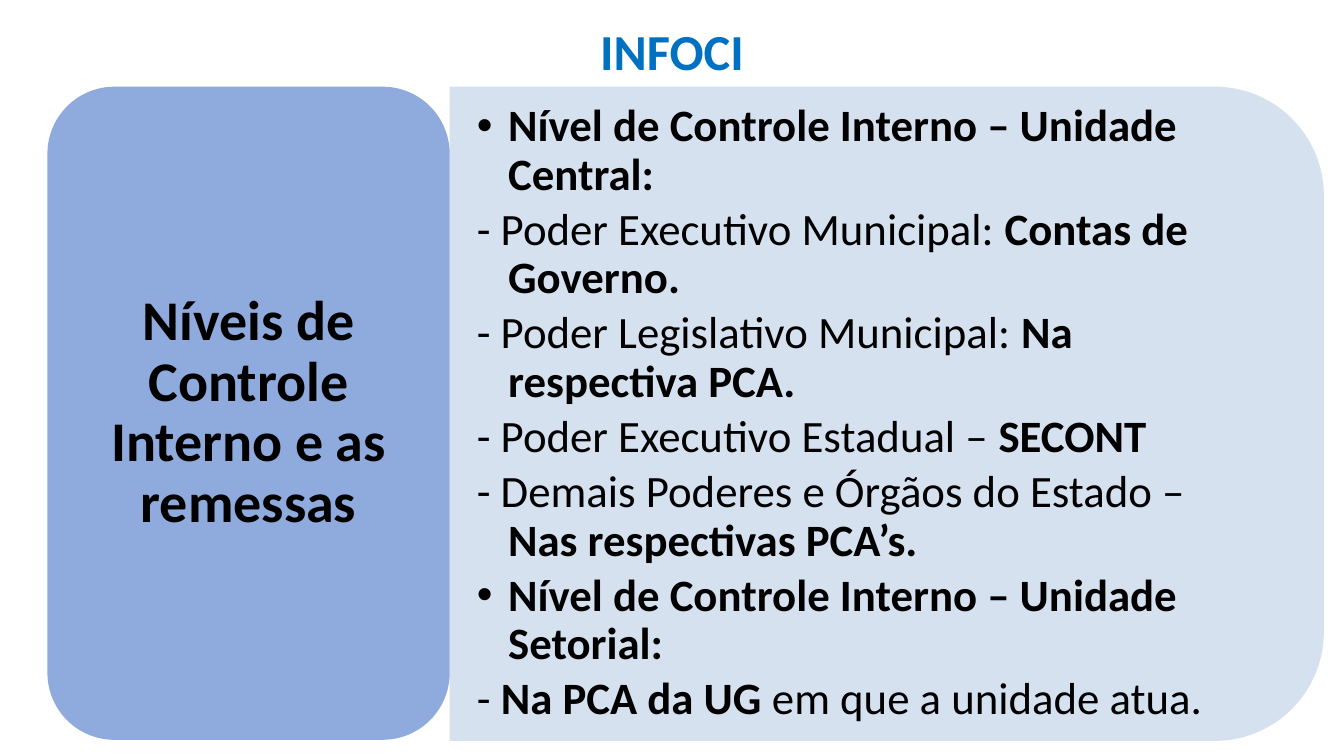
from dataclasses import dataclass

from pptx import Presentation
from pptx.dml.color import RGBColor
from pptx.enum.shapes import MSO_SHAPE
from pptx.enum.text import MSO_ANCHOR, MSO_AUTO_SIZE, PP_ALIGN
from pptx.oxml.ns import qn
from pptx.util import Inches, Pt
from lxml.etree import SubElement

TITLE = [("INFOCI", True)]
TOPIC = [("Níveis de Controle Interno e as remessas", True)]
# Each line: (has bullet, [(text, bold), ...])
LEVELS = [
    (True, [("Nível de Controle Interno – Unidade Central:", True)]),
    (False, [("- Poder Executivo Municipal: ", False), ("Contas de Governo.", True)]),
    (False, [("- Poder Legislativo Municipal: ", False), ("Na respectiva PCA.", True)]),
    (False, [("- Poder Executivo Estadual – ", False), ("SECONT", True)]),
    (False, [("- Demais Poderes e Órgãos do Estado – ", False),
             ("Nas respectivas PCA’s.", True)]),
    (True, [("Nível de Controle Interno – Unidade Setorial:", True)]),
    (False, [("- ", False), ("Na PCA da UG ", True), ("em que a unidade atua.", False)]),
]


@dataclass(frozen=True)
class Theme:
    font: str = "Calibri"
    title_color: str = "0070C0"
    text_color: str = "000000"
    topic_fill: str = "8FAADC"
    panel_fill: str = "D2DEEF"
    panel_alpha: int = 90
    title_size: int = 36
    topic_size: int = 40
    body_size: int = 32
    hanging: float = 0.31


THEME = Theme()
TOPIC_BOX = (0.47, 0.86, 3.99, 6.48)
PANEL_BOX = (4.46, 0.86, 8.67, 6.49)
BODY_BOX = (4.46, 1.18, 8.35, 5.85)
TITLE_BOX = (0.72, 0.15, 11.89, 0.71)


def place(shape, box):
    shape.left, shape.top, shape.width, shape.height = map(Inches, box)


def set_frame(shape, margins, anchor):
    frame = shape.text_frame
    frame.word_wrap = True
    frame.auto_size = MSO_AUTO_SIZE.NONE
    frame.vertical_anchor = anchor
    frame.margin_left = frame.margin_right = Inches(margins[0])
    frame.margin_top = frame.margin_bottom = Inches(margins[1])
    return frame


def write(paragraph, runs, size, color=THEME.text_color, align=PP_ALIGN.CENTER,
          spacing=0.9, after=0):
    paragraph.alignment = align
    paragraph.line_spacing = spacing
    paragraph.space_before = Pt(0)
    paragraph.space_after = Pt(after)
    for text, bold in runs:
        run = paragraph.add_run()
        run.text = text
        run.font.name = THEME.font
        run.font.size = Pt(size)
        run.font.bold = bold
        run.font.color.rgb = RGBColor.from_string(color)


def set_bullet(paragraph, bulleted):
    properties = paragraph._p.get_or_add_pPr()
    properties.set("marL", str(Inches(THEME.hanging)))
    properties.set("indent", str(-Inches(THEME.hanging)))
    if bulleted:
        SubElement(properties, qn("a:buChar")).set("char", "•")
    else:
        SubElement(properties, qn("a:buNone"))


def add_filled(slide, preset, box, color):
    shape = slide.shapes.add_shape(preset, *map(Inches, box))
    shape.shadow.inherit = False
    shape.fill.solid()
    shape.fill.fore_color.rgb = RGBColor.from_string(color)
    shape.line.fill.background()
    return shape


def add_panel(slide):
    """Add the panel turned a quarter so that its rounded corners face right."""
    left, top, width, height = PANEL_BOX
    shift = (width - height) / 2
    box = (left + shift, top - shift, height, width)
    panel = add_filled(slide, MSO_SHAPE.ROUND_2_SAME_RECTANGLE, box, THEME.panel_fill)
    panel.rotation = 90
    color = panel.fill._xPr.find(qn("a:solidFill"))[0]
    SubElement(color, qn("a:alpha")).set("val", str(THEME.panel_alpha * 1000))
    return panel


def main():
    presentation = Presentation()
    presentation.slide_width, presentation.slide_height = Inches(13.33), Inches(7.5)
    slide = presentation.slides.add_slide(presentation.slide_layouts[1])

    title, body = slide.placeholders
    place(title, TITLE_BOX)
    frame = set_frame(title, (0.1, 0.05), MSO_ANCHOR.TOP)
    write(frame.paragraphs[0], TITLE, THEME.title_size, color=THEME.title_color, spacing=1.0)

    panel = add_panel(slide)
    body.element.addprevious(panel.element)
    place(body, BODY_BOX)
    frame = set_frame(body, (0.27, 0.14), MSO_ANCHOR.MIDDLE)
    for index, (bulleted, runs) in enumerate(LEVELS):
        paragraph = frame.add_paragraph() if index else frame.paragraphs[0]
        set_bullet(paragraph, bulleted)
        write(paragraph, runs, THEME.body_size, align=PP_ALIGN.LEFT,
              after=0.15 * THEME.body_size)

    topic = add_filled(slide, MSO_SHAPE.ROUNDED_RECTANGLE, TOPIC_BOX, THEME.topic_fill)
    frame = set_frame(topic, (0.17, 0.08), MSO_ANCHOR.MIDDLE)
    write(frame.paragraphs[0], TOPIC, THEME.topic_size)

    presentation.save("out.pptx")


if __name__ == "__main__":
    main()
